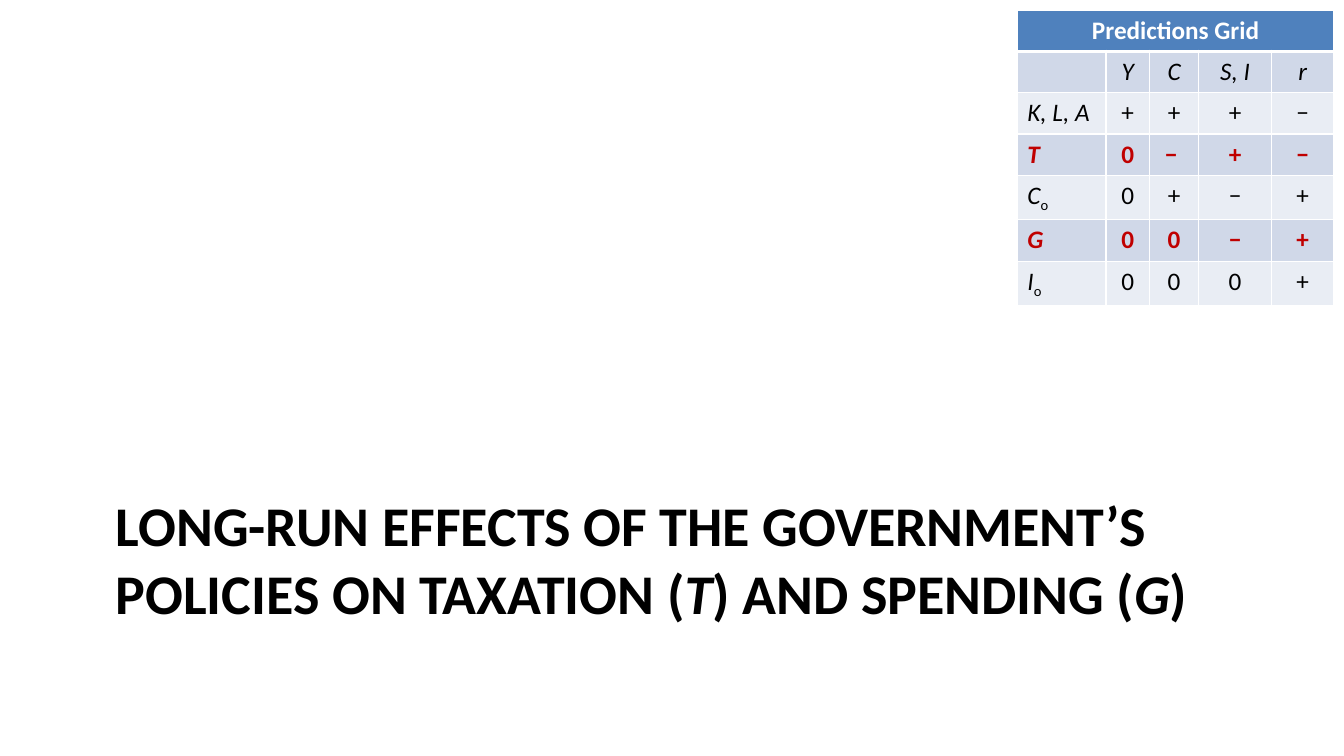
from lxml import etree
from pptx import Presentation
from pptx.dml.color import RGBColor
from pptx.enum.text import MSO_ANCHOR, PP_ALIGN
from pptx.oxml.ns import qn
from pptx.util import Inches, Pt

CENTER = PP_ALIGN.CENTER
LEFT = PP_ALIGN.LEFT
TOP = MSO_ANCHOR.TOP
FONT = "Calibri"
COLORS = {
    "text": "000000",
    "white": "FFFFFF",
    "header": "4F81BD",
    "dark_band": "D0D8E8",
    "light_band": "E9EDF4",
    "highlight": "C00000",
}
TITLE_RUNS = [
    ("LONG-RUN EFFECTS OF THE GOVERNMENT’S POLICIES ON TAXATION (", False),
    ("T", True),
    (") AND SPENDING (", False),
    ("G", True),
    (")", False),
]
COLUMN_WIDTHS = [0.88, 0.43, 0.49, 0.72, 0.62]
ROW_HEIGHT = 0.41
GRID_TITLE = "Predictions Grid"
PREDICTIONS = [
    ["", "Y", "C", "S, I", "r"],
    ["K, L, A", "+", "+", "+", "−"],
    ["T", "0", "− ", "+", "−"],
    ["C_o", "0", "+", "−", "+"],
    ["G", "0", "0", "−", "+"],
    ["I_o", "0", "0", "0", "+"],
]
POLICY_VARIABLES = ("T", "G")


def rgb(name):
    return RGBColor.from_string(COLORS[name])


def add_run(paragraph, text, size, color, bold=False, italic=False):
    run = paragraph.add_run()
    run.text = text
    font = run.font
    font.name = FONT
    font.size = Pt(size)
    font.bold = bold
    font.italic = italic
    font.color.rgb = rgb(color)
    return run


def add_title(slide):
    box = slide.shapes.add_textbox(Inches(1.05), Inches(4.82), Inches(11.33), Inches(1.49))
    frame = box.text_frame
    frame.word_wrap = True
    frame.vertical_anchor = TOP
    for text, italic in TITLE_RUNS:
        add_run(frame.paragraphs[0], text, 40, "text", bold=True, italic=italic)


def set_borders(cell, bottom_width):
    properties = cell._tc.get_or_add_tcPr()
    widths = {"a:lnL": 1, "a:lnR": 1, "a:lnT": 1, "a:lnB": bottom_width}
    for position, (tag, width) in enumerate(widths.items()):
        line = etree.Element(qn(tag), w=str(Pt(width)))
        fill = etree.SubElement(line, qn("a:solidFill"))
        etree.SubElement(fill, qn("a:srgbClr"), val=COLORS["white"])
        properties.insert(position, line)


def style_cell(cell, fill, bottom_width=1):
    cell.fill.solid()
    cell.fill.fore_color.rgb = rgb(fill)
    set_borders(cell, bottom_width)


def write_cell(cell, text, color, bold, italic, alignment):
    paragraph = cell.text_frame.paragraphs[0]
    paragraph.alignment = alignment
    base, _, subscript = text.partition("_")
    if base:
        add_run(paragraph, base, 18, color, bold, italic)
    if subscript:
        run = add_run(paragraph, subscript, 18, color, bold)
        run.font._element.set("baseline", "-25000")


def add_predictions_grid(slide):
    row_count = len(PREDICTIONS) + 1
    frame = slide.shapes.add_table(
        row_count, len(COLUMN_WIDTHS), Inches(10.09), Inches(0.1),
        Inches(sum(COLUMN_WIDTHS)), Inches(ROW_HEIGHT * row_count),
    )
    table = frame.table
    for column, width in zip(table.columns, COLUMN_WIDTHS):
        column.width = Inches(width)
    for row in table.rows:
        row.height = Inches(ROW_HEIGHT)

    for cell in table.rows[0].cells:
        style_cell(cell, "header", bottom_width=3)
    header = table.cell(0, 0)
    header.merge(table.cell(0, len(COLUMN_WIDTHS) - 1))
    write_cell(header, GRID_TITLE, "white", True, False, CENTER)

    for row_index, values in enumerate(PREDICTIONS, start=1):
        band = "dark_band" if row_index % 2 else "light_band"
        is_policy = values[0] in POLICY_VARIABLES
        color = "highlight" if is_policy else "text"
        for column_index, text in enumerate(values):
            cell = table.cell(row_index, column_index)
            style_cell(cell, band)
            is_variable = row_index == 1 or column_index == 0
            alignment = CENTER if column_index else LEFT
            write_cell(cell, text, color, is_policy, is_variable, alignment)


def main():
    presentation = Presentation()
    presentation.slide_width = Inches(13.33)
    presentation.slide_height = Inches(7.5)
    slide = presentation.slides.add_slide(presentation.slide_layouts[6])
    add_title(slide)
    add_predictions_grid(slide)
    presentation.save("out.pptx")


if __name__ == "__main__":
    main()
